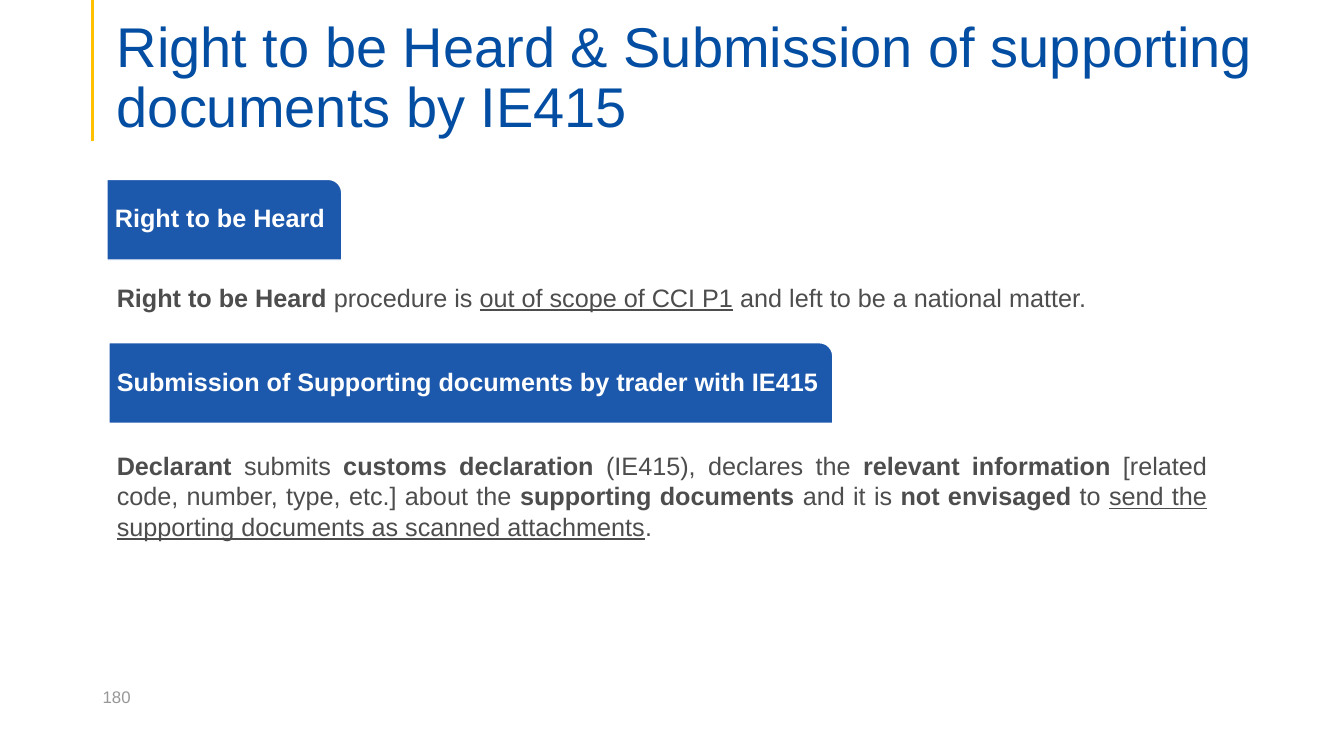
from lxml import etree
from pptx import Presentation
from pptx import util as u
from pptx.dml.color import RGBColor
from pptx.enum import shapes, text
from pptx.oxml.ns import qn

PX = 9144  # EMU in one px, 100 px to the inch
BLUE, PLATE, GOLD = "034EA2", "1C58AC", "FFC000"
INK, GREY, WHITE = "4D4D4D", "979797", "FFFFFF"
TOP, MID, LOW = text.MSO_ANCHOR.TOP, text.MSO_ANCHOR.MIDDLE, text.MSO_ANCHOR.BOTTOM
LEFT, JUST = text.PP_ALIGN.LEFT, text.PP_ALIGN.JUSTIFY


def rgb(code):
    return RGBColor.from_string(code)


def px(*sizes):
    return [u.Emu(size * PX) for size in sizes]


class Page:
    def __init__(self, deck, font):
        self.font = font
        self.items = deck.slides.add_slide(deck.slide_layouts[6]).shapes

    def line(self, x1, y1, x2, y2, color, width):
        rule = self.items.add_connector(
            shapes.MSO_CONNECTOR.STRAIGHT, *px(x1, y1, x2, y2))
        rule.line.color.rgb = rgb(color)
        rule.line.width = u.Pt(width)
        etree.SubElement(rule._element.spPr, qn("a:effectLst"))

    def label(self, shape, runs, size, color, pads, anchor=TOP,
              align=LEFT, lead=1.0, after=0):
        """Fill a shape with runs of (words, style); style holds b and u flags."""
        frame = shape.text_frame
        frame.word_wrap = True
        frame.vertical_anchor = anchor
        (frame.margin_left, frame.margin_top,
         frame.margin_right, frame.margin_bottom) = px(*pads)
        para = frame.paragraphs[0]
        para.alignment = align
        para.line_spacing = lead
        para.space_after = u.Pt(after)
        for words, style in runs:
            run = para.add_run()
            run.text = words
            run.font.name = self.font
            run.font.size = u.Pt(size)
            run.font.color.rgb = rgb(color)
            run.font.bold = "b" in style
            run.font.underline = "u" in style

    def box(self, area, runs, size, color, pads=(10, 5, 10, 5), **look):
        self.label(self.items.add_textbox(*px(*area)), runs, size, color,
                   pads, **look)

    def body(self, area, runs):
        self.box(area, runs, 18, INK, align=JUST, after=18)

    def tab(self, area, words):
        plate = self.items.add_shape(
            shapes.MSO_SHAPE.ROUND_1_RECTANGLE, *px(*area))
        plate.shadow.inherit = False
        plate.fill.solid()
        plate.fill.fore_color.rgb = rgb(PLATE)
        plate.line.color.rgb = rgb(WHITE)
        plate.line.width = u.Pt(1)
        self.label(plate, [(words, "b")], 18, WHITE, (8, 7, 0, 7),
                   anchor=MID, lead=0.9)


def main():
    deck = Presentation()
    deck.slide_width, deck.slide_height = px(1333, 750)
    page = Page(deck, "Arial")

    page.line(92, 0, 92, 140, GOLD, 2.25)
    page.box((106, 53, 1150, 86),
             [("Right to be Heard & Submission of supporting documents by IE415", "")],
             40, BLUE, (10, 5, 10, 0), anchor=LOW, lead=0.9)

    page.tab((106, 178, 233, 80), "Right to be Heard")
    page.body((106, 275, 1101, 65), [
        ("Right to be Heard ", "b"),
        ("procedure is ", ""),
        ("out of scope of CCI P1", "u"),
        (" and left to be a national matter.", ""),
    ])

    page.tab((108, 340, 718, 80),
             "Submission of Supporting documents by trader with IE415")
    page.body((106, 442, 1101, 115), [
        ("Declarant ", "b"),
        ("submits ", ""),
        ("customs declaration ", "b"),
        ("(IE415), declares the ", ""),
        ("relevant information", "b"),
        (" [related code, number, type, etc.] about the ", ""),
        ("supporting documents", "b"),
        (" and it is ", ""),
        ("not envisaged", "b"),
        (" to ", ""),
        ("send the supporting documents as scanned attachments", "u"),
        (".", ""),
    ])

    page.box((92, 671, 300, 40), [("180", "")], 12, GREY, anchor=MID)
    deck.save("out.pptx")


if __name__ == "__main__":
    main()
